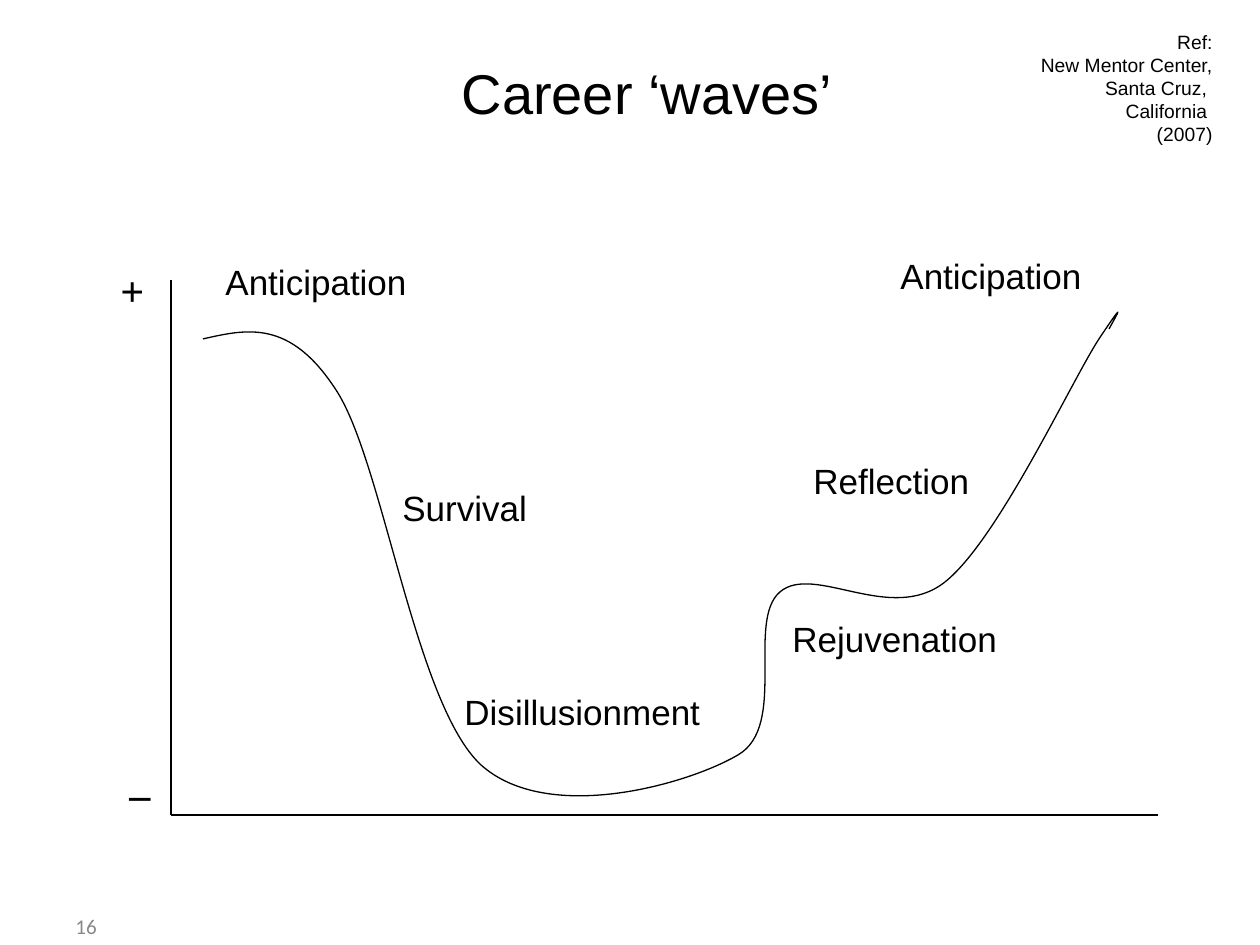
from dataclasses import dataclass

from lxml import etree
from pptx import Presentation
from pptx import util as u
from pptx.dml.color import RGBColor
from pptx.enum import shapes, text
from pptx.oxml.ns import qn


@dataclass(frozen=True)
class Theme:
    ink: str = "000000"
    muted: str = "898989"
    sans: str = "Arial"
    serif: str = "Times New Roman"
    number: str = "Calibri"
    title_size: int = 32
    sign_size: int = 24
    phase_size: int = 20
    number_size: int = 12
    ref_size: int = 11
    line_width: float = 0.75


THEME = Theme()
PX = 914400 / 126
SLIDE_SIZE = (1260, 945)

# Content: text and left, top, width, height in px
TITLE = ("Career ‘waves’", (389, 23, 516, 157))
PHASES = [
    ("Anticipation", (213, 254, 208, 55)),
    ("Survival", (390, 480, 151, 55)),
    ("Disillusionment", (452, 684, 272, 55)),
    ("Rejuvenation", (780, 611, 237, 55)),
    ("Reflection", (801, 453, 183, 55)),
    ("Anticipation", (888, 248, 208, 55)),
]
SIGNS = [("_", (117, 747, 47, 63)), ("+", (108, 258, 49, 63))]
REFERENCE = (
    ["Ref:", "New Mentor Center,", "Santa Cruz, ", "California ", "(2007)"],
    (998, 24, 227, 130),
)
PAGE_NUMBER = ("16", (63, 901, 294, 50))

# Axes meet at the origin; the wave is a chain of cubic curves
ORIGIN, AXIS_TOP, AXIS_RIGHT = (171, 815), (171, 280), (1158, 815)
WAVE_START = (203, 339)
WAVE = [
    ((247, 329), (290, 319), (336, 390)),
    ((383, 461), (415, 704), (481, 765)),
    ((548, 825), (689, 784), (738, 755)),
    ((788, 726), (746, 621), (780, 592)),
    ((814, 563), (891, 625), (945, 582)),
    ((998, 540), (1071, 382), (1099, 339)),
    ((1127, 297), (1118, 313), (1109, 329)),
]


def emu(px):
    return u.Emu(round(px * PX))


def place(shape, box):
    for side, px in zip(("left", "top", "width", "height"), box):
        setattr(shape, side, emu(px))


def write(shape, lines, font, size, color=THEME.ink, bold=False, align=text.PP_ALIGN.LEFT, **frame):
    for name, value in frame.items():
        setattr(shape.text_frame, name, value)
    shape.text_frame.text = "\n".join(lines)
    for paragraph in shape.text_frame.paragraphs:
        paragraph.alignment = align
        for name, value in {"name": font, "size": u.Pt(size), "bold": bold}.items():
            setattr(paragraph.runs[0].font, name, value)
        paragraph.runs[0].font.color.rgb = RGBColor.from_string(color)


def add_label(slide, lines, box, font, size, **format_values):
    label = slide.shapes.add_textbox(*map(emu, box))
    write(label, lines, font, size, **format_values)


def ink_line(shape):
    shape.line.color.rgb = RGBColor.from_string(THEME.ink)
    shape.line.width = u.Pt(THEME.line_width)


def add_axis(slide, start, end):
    axis = slide.shapes.add_connector(
        shapes.MSO_CONNECTOR.STRAIGHT, *map(emu, start + end))
    ink_line(axis)
    etree.SubElement(axis._element.spPr, qn("a:effectLst"))


def add_wave(slide):
    builder = slide.shapes.build_freeform(*WAVE_START, scale=PX)
    builder.add_line_segments([point for curve in WAVE for point in curve], close=False)
    wave = builder.convert_to_shape()
    wave.shadow.inherit = False
    wave.fill.background()
    ink_line(wave)

    # Join every three straight segments into one cubic curve
    outline = next(wave._element.iter(qn("a:path")))
    segments = outline.findall(qn("a:lnTo"))
    for first in range(0, len(segments), 3):
        curve = etree.SubElement(outline, qn("a:cubicBezTo"))
        for segment in segments[first:first + 3]:
            curve.append(segment[0])
            outline.remove(segment)


def main():
    prs = Presentation()
    prs.slide_width, prs.slide_height = map(emu, SLIDE_SIZE)
    slide = prs.slides.add_slide(prs.slide_layouts[5])

    # Title, held slightly above the middle of its box
    heading, box = TITLE
    place(slide.shapes.title, box)
    write(slide.shapes.title, [heading], THEME.sans, THEME.title_size,
          align=text.PP_ALIGN.CENTER, margin_bottom=emu(26),
          vertical_anchor=text.MSO_ANCHOR.MIDDLE)

    # Axes and wave
    add_axis(slide, AXIS_TOP, ORIGIN)
    add_axis(slide, ORIGIN, AXIS_RIGHT)
    add_wave(slide)

    # Axis signs and phase names
    for sign, box in SIGNS:
        add_label(slide, [sign], box, THEME.serif, THEME.sign_size, bold=True, word_wrap=False)
    for phase, box in PHASES:
        add_label(slide, [phase], box, THEME.sans, THEME.phase_size, word_wrap=False)

    # Reference and page number
    add_label(slide, *REFERENCE, THEME.sans, THEME.ref_size,
              align=text.PP_ALIGN.RIGHT, word_wrap=True)
    number, box = PAGE_NUMBER
    add_label(slide, [number], box, THEME.number, THEME.number_size, color=THEME.muted,
              word_wrap=True, vertical_anchor=text.MSO_ANCHOR.MIDDLE)

    prs.save("out.pptx")


if __name__ == "__main__":
    main()
